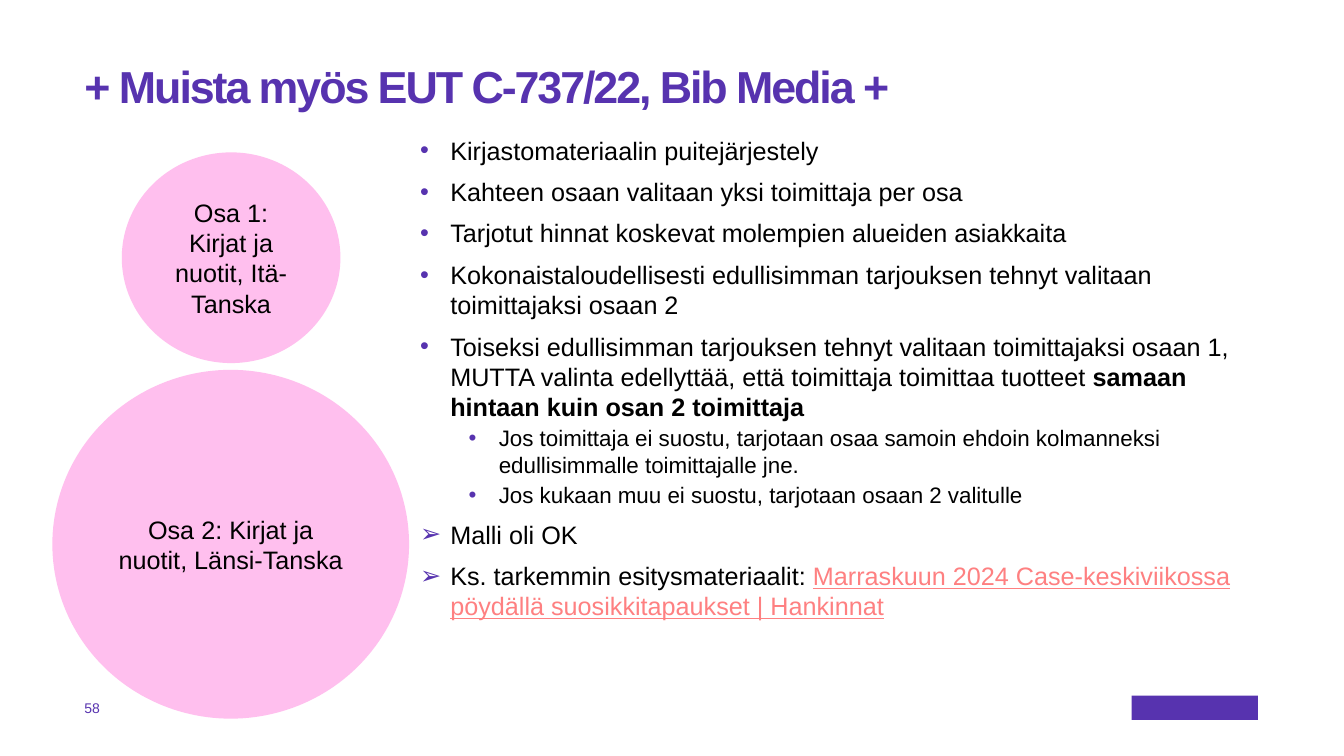
from dataclasses import dataclass

from lxml import etree
from pptx import Presentation
from pptx import util as u
from pptx.dml.color import RGBColor
from pptx.enum import shapes, text
from pptx.oxml.ns import qn

COLORS = {"purple": "5733AF", "pink": "FFBFEE", "coral": "FE8081", "black": "000000"}
FONT = "Arial"


@dataclass(frozen=True)
class Box:
    left: float
    top: float
    width: float
    height: float

    def lengths(self) -> list[u.Length]:
        return [u.Cm(n) for n in (self.left, self.top, self.width, self.height)]


@dataclass(frozen=True)
class Run:
    text: str
    size: float = 18
    color: str = "black"
    bold: bool = False
    underline: bool = False


@dataclass(frozen=True)
class Point:
    runs: tuple[Run, ...]
    bullet: str = "•"
    level: int = 0


@dataclass(frozen=True)
class Lot:
    box: Box
    lines: tuple[str, ...]


LOTS = (
    Lot(Box(3.07, 3.84, 5.51, 5.31), ("Osa 1:", "Kirjat ja nuotit, Itä-Tanska")),
    Lot(Box(1.32, 9.32, 8.99, 8.79), ("Osa 2: Kirjat ja nuotit, Länsi-Tanska",)),
)
POINTS = (
    Point((Run("Kirjastomateriaalin puitejärjestely"),)),
    Point((Run("Kahteen osaan valitaan yksi toimittaja per osa"),)),
    Point((Run("Tarjotut hinnat koskevat molempien alueiden asiakkaita"),)),
    Point((Run("Kokonaistaloudellisesti edullisimman tarjouksen tehnyt valitaan "
               "toimittajaksi osaan 2"),)),
    Point((Run("Toiseksi edullisimman tarjouksen tehnyt valitaan toimittajaksi osaan 1, "
               "MUTTA valinta edellyttää, että toimittaja toimittaa tuotteet "),
           Run("samaan hintaan kuin osan 2 toimittaja", bold=True))),
    Point((Run("Jos toimittaja ei suostu, tarjotaan osaa samoin ehdoin kolmanneksi "
               "edullisimmalle toimittajalle jne.", size=16),), level=1),
    Point((Run("Jos kukaan muu ei suostu, tarjotaan osaan 2 valitulle", size=16),), level=1),
    Point((Run("Malli oli OK"),), bullet="➢"),
    Point((Run("Ks. tarkemmin esitysmateriaalit: "),
           Run("Marraskuun 2024 Case-keskiviikossa pöydällä suosikkitapaukset | Hankinnat",
               color="coral", underline=True)), bullet="➢"),
)
LEVEL_INDENT = (0.76, 1.98)
LEVEL_SPACE = (8, 2)
HANGING = 0.76


def rgb(name: str) -> RGBColor:
    return RGBColor.from_string(COLORS[name])


def add_run(paragraph, run: Run):
    piece = paragraph.add_run()
    piece.text = run.text
    font_format = {"name": FONT, "size": u.Pt(run.size), "bold": run.bold,
                   "underline": run.underline}
    for attribute, value in font_format.items():
        setattr(piece.font, attribute, value)
    piece.font.color.rgb = rgb(run.color)
    return piece


def add_frame(slide, box: Box, anchor=text.MSO_ANCHOR.TOP):
    """Add a wrapping text box without margins and return its text frame."""
    frame = slide.shapes.add_textbox(*box.lengths()).text_frame
    frame_format = {"word_wrap": True, "vertical_anchor": anchor, "margin_left": 0,
                    "margin_top": 0, "margin_right": 0, "margin_bottom": 0}
    for attribute, value in frame_format.items():
        setattr(frame, attribute, value)
    return frame


def next_paragraph(frame, index: int):
    return frame.add_paragraph() if index else frame.paragraphs[0]


def set_bullet(paragraph, point: Point) -> None:
    properties = paragraph._p.get_or_add_pPr()
    properties.set("marL", str(u.Cm(LEVEL_INDENT[point.level])))
    properties.set("indent", str(-u.Cm(HANGING)))
    color = etree.SubElement(properties, qn("a:buClr"))
    etree.SubElement(color, qn("a:srgbClr"), val=COLORS["purple"])
    etree.SubElement(properties, qn("a:buFont"), typeface=FONT)
    etree.SubElement(properties, qn("a:buChar"), char=point.bullet)


def add_points(slide, box: Box, points: tuple[Point, ...]) -> None:
    frame = add_frame(slide, box)
    for index, point in enumerate(points):
        paragraph = next_paragraph(frame, index)
        paragraph.level = point.level
        set_bullet(paragraph, point)
        paragraph.space_before = u.Pt(LEVEL_SPACE[point.level] if index else 0)
        for run in point.runs:
            add_run(paragraph, run)


def add_filled(slide, kind, box: Box, color: str):
    shape = slide.shapes.add_shape(kind, *box.lengths())
    shape.shadow.inherit = False
    shape.fill.solid()
    shape.fill.fore_color.rgb = rgb(color)
    shape.line.fill.background()
    return shape


def add_lot(slide, lot: Lot) -> None:
    circle = add_filled(slide, shapes.MSO_SHAPE.FLOWCHART_CONNECTOR, lot.box, "pink")
    frame = circle.text_frame
    frame.word_wrap = True
    frame.vertical_anchor = text.MSO_ANCHOR.MIDDLE
    for index, line in enumerate(lot.lines):
        paragraph = next_paragraph(frame, index)
        paragraph.alignment = text.PP_ALIGN.CENTER
        add_run(paragraph, Run(line))


def add_title(slide, box: Box, wording: str) -> None:
    paragraph = add_frame(slide, box).paragraphs[0]
    paragraph.line_spacing = 0.9
    title = add_run(paragraph, Run(wording, size=32, color="purple", bold=True))
    title.font._element.set("spc", "-150")


def main() -> None:
    deck = Presentation()
    deck.slide_width, deck.slide_height = u.Cm(33.87), u.Cm(19.05)
    slide = deck.slides.add_slide(deck.slide_layouts[6])

    add_filled(slide, shapes.MSO_SHAPE.RECTANGLE, Box(28.52, 17.53, 3.18, 0.61), "purple")
    add_title(slide, Box(2.13, 1.63, 30, 4.5), "+ Muista myös EUT C-737/22, Bib Media +")
    add_points(slide, Box(10.59, 3.4, 21.16, 14.12), POINTS)
    page_number = add_frame(slide, Box(2.13, 17.53, 1.19, 0.61), text.MSO_ANCHOR.MIDDLE)
    add_run(page_number.paragraphs[0], Run("58", size=10, color="purple"))
    for lot in LOTS:
        add_lot(slide, lot)

    deck.save("out.pptx")


if __name__ == "__main__":
    main()
